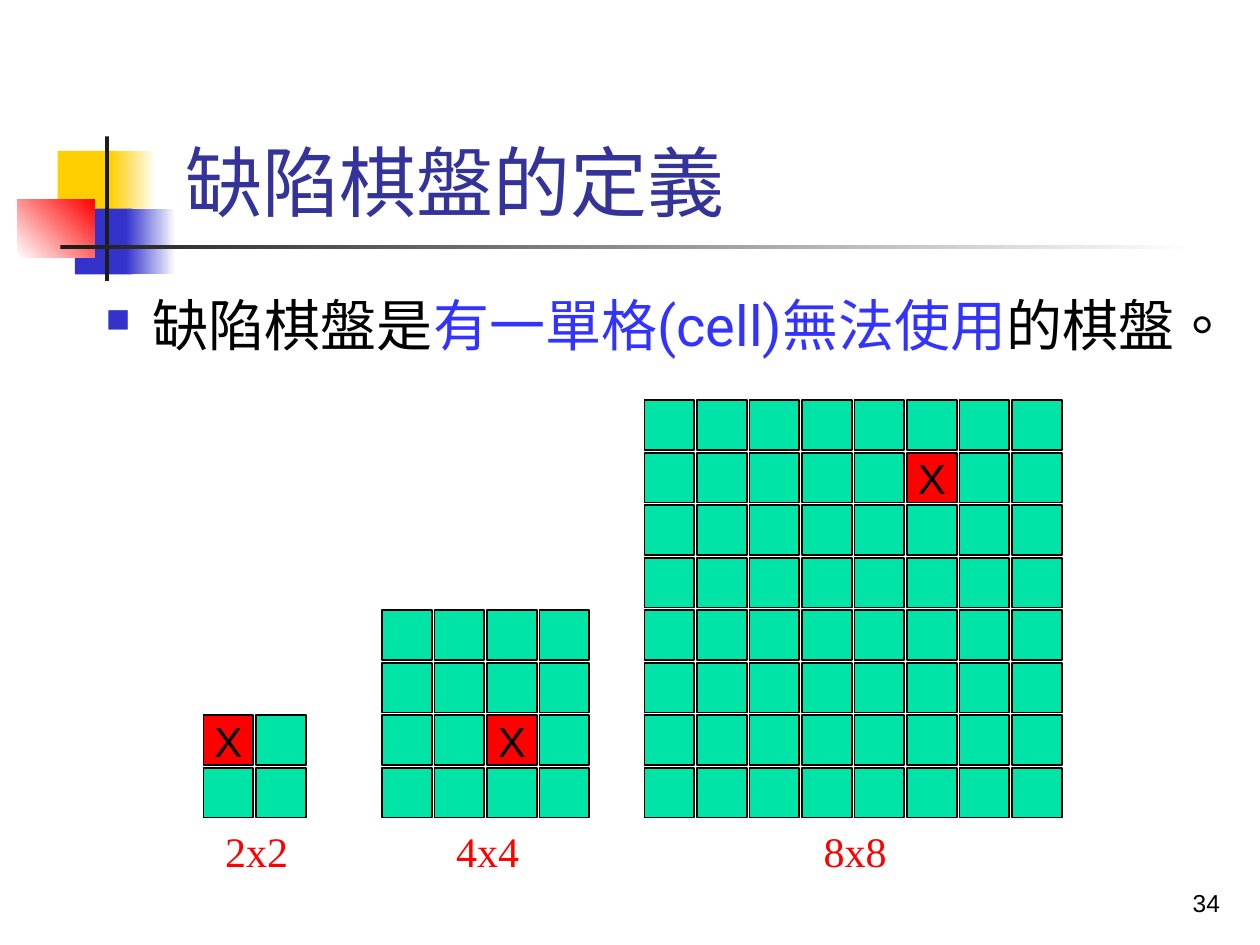
from lxml import etree
from pptx import Presentation
from pptx.dml.color import RGBColor as RGB
from pptx.enum.shapes import MSO_SHAPE as Kind
from pptx.enum.text import MSO_ANCHOR as Anchor, MSO_AUTO_SIZE as Fit, PP_ALIGN as Align
from pptx.oxml.ns import qn
from pptx.util import Pt

PX = 9525
HUES = {
    "gold": "FFCF01", "blue": "3333CC", "red": "FF0000", "white": "FFFFFF",
    "dark": "1C1C1C", "black": "000000", "title": "333399", "key": "3333FF",
    "green": "00E4A8",
}


def block(group, box, hue, fade=None, angle=0):
    shape = group.add_shape(Kind.RECTANGLE, *[n * PX for n in box])
    shape.shadow.inherit = False
    shape.line.fill.background()
    if fade:
        shape.fill.gradient()
        shape.fill.gradient_angle = angle
        for stop, name in zip(shape.fill.gradient_stops, (hue, fade)):
            stop.color.rgb = RGB.from_string(HUES[name])
    else:
        shape.fill.solid()
        shape.fill.fore_color.rgb = RGB.from_string(HUES[hue])
    return shape


def write(frame, parts, size, font, align=Align.LEFT, anchor=Anchor.TOP, before=0):
    frame.auto_size = Fit.NONE
    frame.word_wrap = True
    frame.vertical_anchor = anchor
    para = frame.paragraphs[0]
    para.alignment = align
    for text, hue in parts:
        run = para.add_run()
        run.text = text
        run.font.size = Pt(size)
        run.font.name = font
        run.font.color.rgb = RGB.from_string(HUES[hue])
        run._r.get_or_add_rPr().set("lang", "zh-TW")
    props = para._p.get_or_add_pPr()
    if before:
        space = etree.SubElement(props, qn("a:spcBef"))
        etree.SubElement(space, qn("a:spcPct")).set("val", str(before * 1000))
    return props


deck = Presentation()
deck.slide_width, deck.slide_height = 960 * PX, 720 * PX
slide = deck.slides.add_slide(deck.slide_layouts[5])
shapes = slide.shapes

for box, hue, fade, angle in [
    ((44, 115, 46, 50), "gold", None, 0),
    ((84, 115, 35, 50), "gold", "white", 0),
    ((57, 159, 44, 50), "blue", None, 0),
    ((96, 159, 38, 50), "blue", "white", 0),
    ((13, 152, 59, 44), "white", "red", 45),
    ((80, 104, 3, 110), "dark", None, 0),
    ((46, 187, 864, 3), "dark", "white", 0),
]:
    block(shapes, box, hue, fade, angle)

title = shapes.title
title.left, title.top, title.width, title.height = [n * PX for n in (132, 20, 764, 158)]
write(title.text_frame, [("缺陷棋盤的定義", "title")], 44, "Roboto", anchor=Anchor.BOTTOM)

body = shapes.add_textbox(*[n * PX for n in (71, 217, 854, 128)])
parts = [
    ("缺陷棋盤是", "black"),
    ("有一單格(cell)無法使用", "key"),
    ("的棋盤。", "black"),
]
props = write(body.text_frame, parts, 32, "Roboto", before=20)
props.set("marL", str(36 * PX))
props.set("indent", str(-36 * PX))
tint = etree.SubElement(props, qn("a:buClr"))
etree.SubElement(tint, qn("a:srgbClr")).set("val", HUES["blue"])
etree.SubElement(props, qn("a:buSzPct")).set("val", "60000")
etree.SubElement(props, qn("a:buChar")).set("char", "■")

STEP, CELL, BASE = 40, 38, 625
for count, left, flaw, mark in [
    (2, 155, (0, 0), 162),
    (4, 291, (2, 2), 338),
    (8, 491, (1, 5), 618),
]:
    board = shapes.add_group_shape().shapes
    top = BASE - count * STEP
    for row in range(count):
        for col in range(count):
            bad = (row, col) == flaw
            box = (left + col * STEP, top + row * STEP, CELL, CELL)
            cell = block(board, box, "red" if bad else "green")
            cell.line.color.rgb = RGB.from_string(HUES["black"])
            cell.line.width = Pt(1)
            if bad:
                write(cell.text_frame, [("X", "black")], 24, "Arial", Align.CENTER, Anchor.MIDDLE)
                cell.text_frame.word_wrap = False
    label = board.add_textbox(*[n * PX for n in (mark, 624, 80, 48)])
    write(label.text_frame, [(f"{count}x{count}", "red")], 24, "Times New Roman", before=50)

number = shapes.add_textbox(*[n * PX for n in (739, 656, 200, 48)])
write(number.text_frame, [("34", "black")], 14, "Arial", Align.RIGHT, Anchor.BOTTOM)

deck.save("out.pptx")
